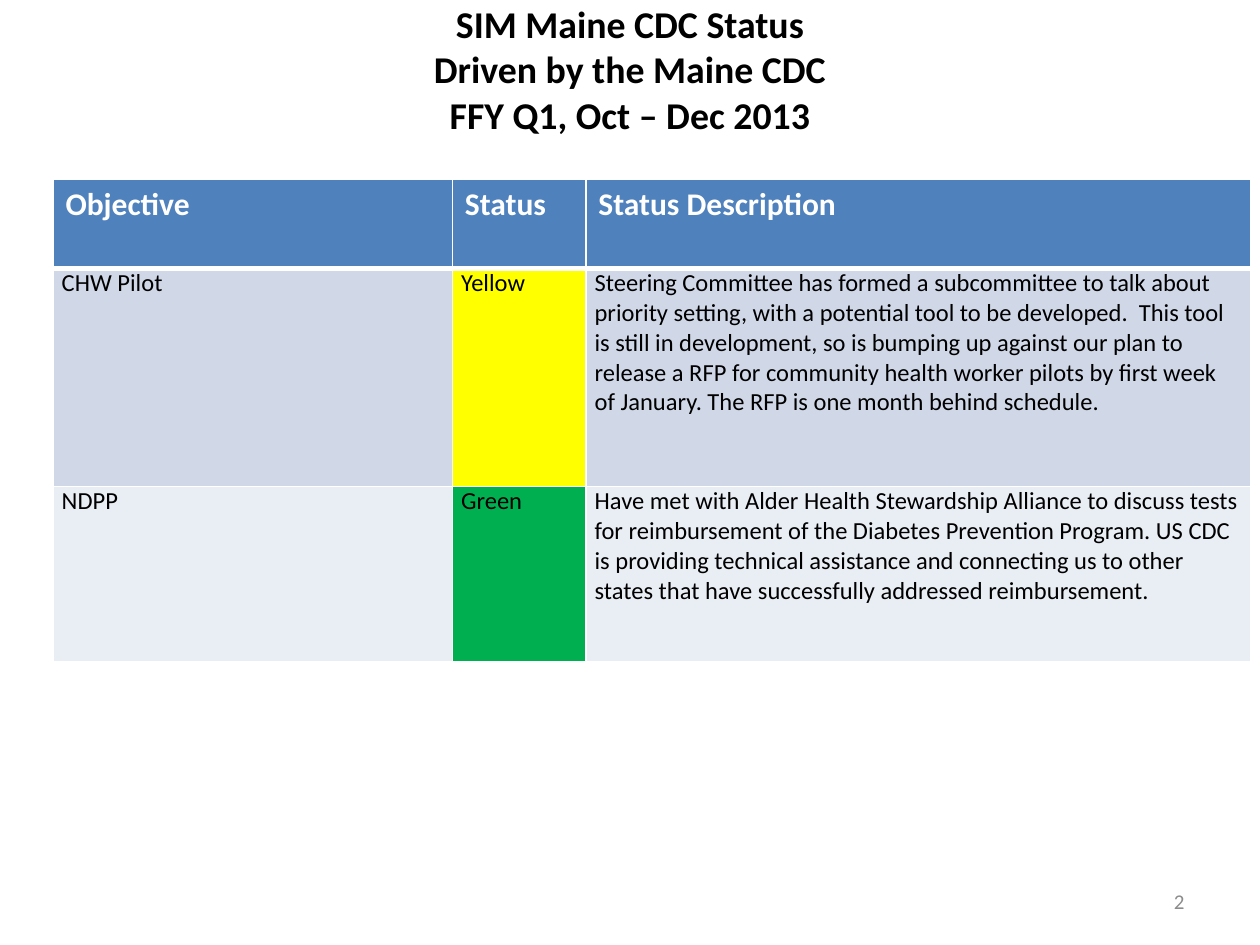
from lxml import etree
from pptx import Presentation
from pptx.dml.color import RGBColor
from pptx.enum import text
from pptx.oxml import ns
from pptx.util import Inches, Pt

BLACK = RGBColor(0x00, 0x00, 0x00)
WHITE = RGBColor(0xFF, 0xFF, 0xFF)
GRAY = RGBColor(0x8C, 0x8C, 0x8C)
BLUE = RGBColor(0x4F, 0x81, 0xBD)
PALE = RGBColor(0xD0, 0xD8, 0xE8)
LIGHT = RGBColor(0xE9, 0xED, 0xF4)
YELLOW = RGBColor(0xFF, 0xFF, 0x00)
GREEN = RGBColor(0x00, 0xB0, 0x50)


def style(font, size, color, bold=False):
    for key, val in {"name": "Calibri", "size": Pt(size), "bold": bold}.items():
        setattr(font, key, val)
    font.color.rgb = color


def edge(cell, widths):
    props = cell._tc.get_or_add_tcPr()
    for spot, (side, width) in enumerate(widths.items()):
        line = etree.Element(ns.qn("a:ln" + side), w=str(Pt(width)))
        fill = etree.SubElement(line, ns.qn("a:solidFill"))
        etree.SubElement(fill, ns.qn("a:srgbClr"), val=str(WHITE))
        props.insert(spot, line)


deck = Presentation()
deck.slide_width, deck.slide_height = Inches(10), Inches(7.5)
slide = deck.slides.add_slide(deck.slide_layouts[5])

# Title
title = slide.shapes.title
box = {"left": 0.5, "top": -0.08, "width": 9, "height": 1.25}
for key, val in box.items():
    setattr(title, key, Inches(val))
title.text_frame.vertical_anchor = text.MSO_ANCHOR.MIDDLE
para = title.text_frame.paragraphs[0]
para.alignment = text.PP_ALIGN.CENTER
lines = ["SIM Maine CDC Status", "Driven by the Maine CDC", "FFY Q1, Oct – Dec 2013"]
for num, line in enumerate(lines):
    if num:
        para.add_line_break()
    run = para.add_run()
    run.text = line
    style(run.font, 21.6, BLACK, True)

# Status table
rows = [
    (0.71, [BLUE] * 3, ["Objective", "Status", "Status Description"]),
    (1.73, [PALE, YELLOW, PALE], [
        "CHW Pilot", "Yellow",
        "Steering Committee has formed a subcommittee to talk about priority "
        "setting, with a potential tool to be developed.  This tool is still in "
        "development, so is bumping up against our plan to release a RFP for "
        "community health worker pilots by first week of January. The RFP is "
        "one month behind schedule."]),
    (1.39, [LIGHT, GREEN, LIGHT], [
        "NDPP", "Green",
        "Have met with Alder Health Stewardship Alliance to discuss tests for "
        "reimbursement of the Diabetes Prevention Program. US CDC is providing "
        "technical assistance and connecting us to other states that have "
        "successfully addressed reimbursement."]),
]
table = slide.shapes.add_table(
    3, 3, Inches(0.42), Inches(1.42), Inches(9.5), Inches(3.83)).table
for col, width in zip(table.columns, [3.17, 1.06, 5.28]):
    col.width = Inches(width)
pads = {"margin_left": 0.07, "margin_right": 0.07, "margin_top": 0, "margin_bottom": 0}
for r, (height, fills, words) in enumerate(rows):
    head = r == 0
    table.rows[r].height = Inches(height)
    for c, (fill, word) in enumerate(zip(fills, words)):
        cell = table.cell(r, c)
        cell.text = word
        cell.fill.solid()
        cell.fill.fore_color.rgb = fill
        font = cell.text_frame.paragraphs[0].runs[0].font
        if head:
            style(font, 18, WHITE, True)
        else:
            style(font, 14, BLACK)
            for key, val in pads.items():
                setattr(cell, key, Inches(val))
        edge(cell, {"L": 1, "R": 1, "T": 3 if r == 1 else 1, "B": 3 if head else 1})

# Page number
page = slide.shapes.add_textbox(Inches(7.17), Inches(6.95), Inches(2.33), Inches(0.4))
frame = page.text_frame
frame.word_wrap = True
frame.vertical_anchor = text.MSO_ANCHOR.MIDDLE
frame.text = "2"
frame.paragraphs[0].alignment = text.PP_ALIGN.RIGHT
style(frame.paragraphs[0].runs[0].font, 12, GRAY)

deck.save("out.pptx")
